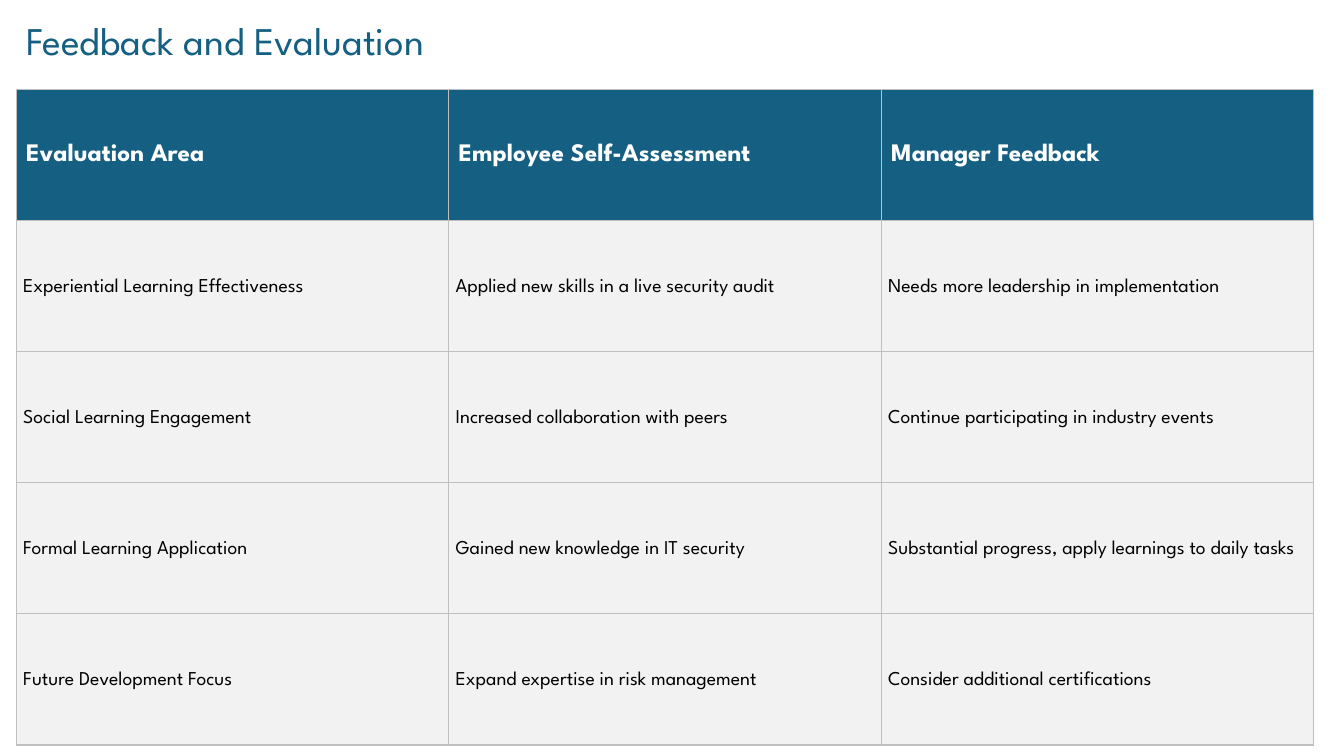
from dataclasses import dataclass

from lxml.etree import SubElement
from pptx import Presentation
from pptx.dml.color import RGBColor as RGB
from pptx.enum.text import MSO_ANCHOR as Anchor, MSO_AUTO_SIZE as AutoSize
from pptx.oxml.ns import qn
from pptx.util import Inches, Pt


@dataclass(frozen=True)
class Theme:
    font: str = "League Spartan"
    accent: str = "156082"
    panel: str = "F2F2F2"
    border: str = "BFBFBF"
    light: str = "FFFFFF"
    dark: str = "000000"
    title_size: int = 28
    header_size: int = 18
    body_size: int = 14


THEME = Theme()
SLIDE_W, SLIDE_H = 13.33, 7.5
MARGIN = 0.16
TITLE_BOX = (MARGIN, 0.11, 8.08, 0.57)
TABLE_TOP, COL_W, ROW_H = 0.89, 4.29, 1.3

TITLE = "Feedback and Evaluation"
ROWS = [
    ("Evaluation Area", "Employee Self-Assessment", "Manager Feedback"),
    ("Experiential Learning Effectiveness",
     "Applied new skills in a live security audit",
     "Needs more leadership in implementation"),
    ("Social Learning Engagement",
     "Increased collaboration with peers",
     "Continue participating in industry events"),
    ("Formal Learning Application",
     "Gained new knowledge in IT security",
     "Substantial progress, apply learnings to daily tasks"),
    ("Future Development Focus",
     "Expand expertise in risk management",
     "Consider additional certifications"),
]

HEADER = dict(size=THEME.header_size, color=THEME.light, bold=True)
BODY = dict(size=THEME.body_size, color=THEME.dark, bold=False)
BODY_CELL = dict(margin_left=Inches(0.07), margin_right=Inches(0.07),
                 margin_top=0, margin_bottom=0)
BODY_PARAGRAPH = dict(line_spacing=1.15, space_after=Pt(8))


def set_format(target, values):
    for name, value in values.items():
        setattr(target, name, value)


def write(tf, text, size, color, bold=False):
    p = tf.paragraphs[0]
    r = p.add_run()
    r.text = text
    set_format(r.font, dict(name=THEME.font, size=Pt(size), bold=bold))
    r.font.color.rgb = RGB.from_string(color)
    return p


def add_title(slide):
    tf = slide.shapes.add_textbox(*map(Inches, TITLE_BOX)).text_frame
    set_format(tf, dict(word_wrap=True, auto_size=AutoSize.SHAPE_TO_FIT_TEXT))
    write(tf, TITLE, THEME.title_size, THEME.accent)


def add_borders(cell):
    """Outline all four sides; lines must precede the fill in the cell XML."""
    tc_pr = cell._tc.get_or_add_tcPr()
    for i, side in enumerate(("lnL", "lnR", "lnT", "lnB")):
        ln = SubElement(tc_pr, qn(f"a:{side}"), w=str(Pt(1)))
        fill = SubElement(ln, qn("a:solidFill"))
        SubElement(fill, qn("a:srgbClr"), val=THEME.border)
        tc_pr.insert(i, ln)


def fill_cell(cell, text, is_header):
    cell.vertical_anchor = Anchor.MIDDLE
    cell.fill.solid()
    cell.fill.fore_color.rgb = RGB.from_string(
        THEME.accent if is_header else THEME.panel)
    p = write(cell.text_frame, text, **(HEADER if is_header else BODY))
    if not is_header:
        set_format(cell, BODY_CELL)
        set_format(p, BODY_PARAGRAPH)
    add_borders(cell)


def add_evaluation_table(slide):
    n_rows, n_cols = len(ROWS), len(ROWS[0])
    box = (MARGIN, TABLE_TOP, n_cols * COL_W, n_rows * ROW_H)
    table = slide.shapes.add_table(n_rows, n_cols, *map(Inches, box)).table
    table.horz_banding = False
    for column in table.columns:
        column.width = Inches(COL_W)
    for i, (row, texts) in enumerate(zip(table.rows, ROWS)):
        row.height = Inches(ROW_H)
        for cell, text in zip(row.cells, texts):
            fill_cell(cell, text, is_header=i == 0)


def main():
    prs = Presentation()
    set_format(prs, dict(slide_width=Inches(SLIDE_W),
                         slide_height=Inches(SLIDE_H)))
    slide = prs.slides.add_slide(prs.slide_layouts[6])
    add_title(slide)
    add_evaluation_table(slide)
    prs.save("out.pptx")


if __name__ == "__main__":
    main()
